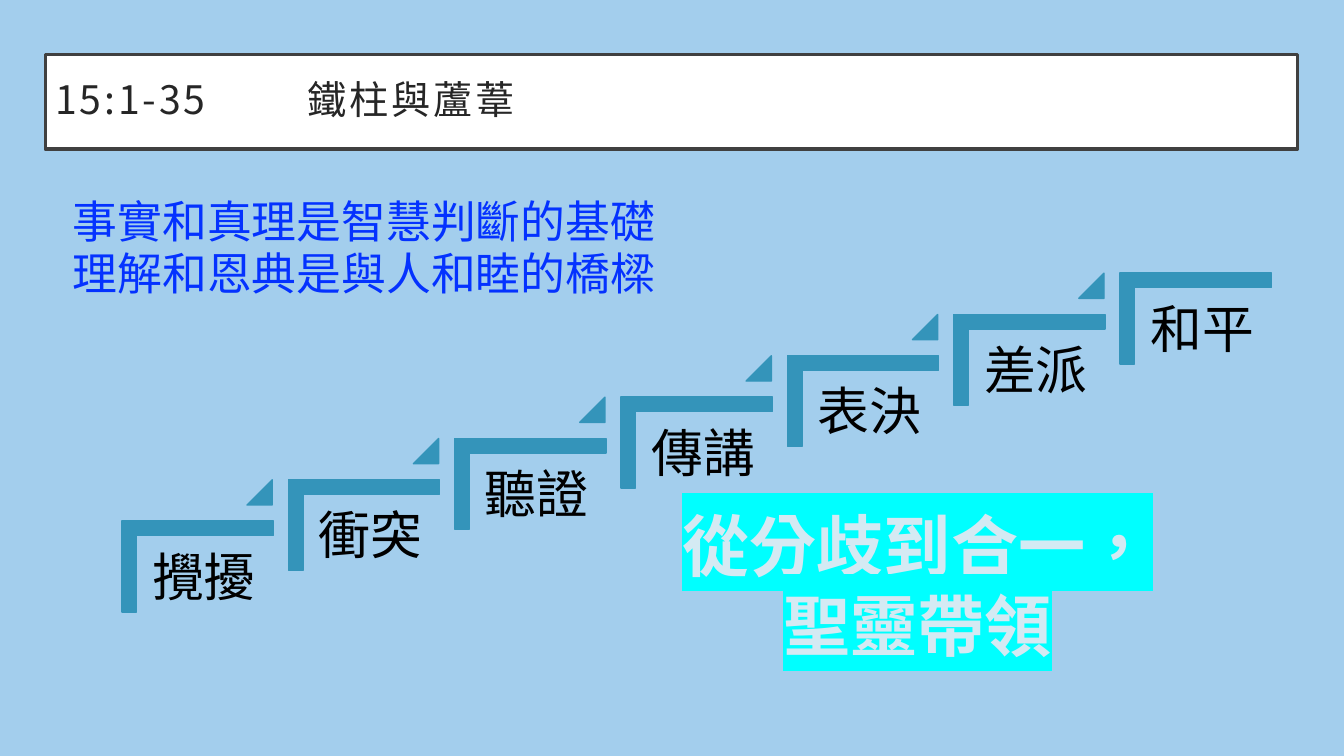
from dataclasses import dataclass

from lxml import etree
from pptx import Presentation
from pptx.dml.color import RGBColor
from pptx.enum.shapes import MSO_SHAPE
from pptx.enum.text import MSO_ANCHOR, MSO_AUTO_SIZE, PP_ALIGN
from pptx.oxml.ns import qn
from pptx.util import Inches, Pt

CORNER = MSO_SHAPE.CORNER
WEDGE = MSO_SHAPE.ISOSCELES_TRIANGLE
LEFT, CENTER = PP_ALIGN.LEFT, PP_ALIGN.CENTER
TOP, MIDDLE = MSO_ANCHOR.TOP, MSO_ANCHOR.MIDDLE
FIXED, GROW = MSO_AUTO_SIZE.NONE, MSO_AUTO_SIZE.SHAPE_TO_FIT_TEXT


@dataclass(frozen=True)
class Theme:
    sky: str = "A3CEED"
    teal: str = "3494BA"
    white: str = "FFFFFF"
    frame: str = "404040"
    ink: str = "262626"
    black: str = "000000"
    blue: str = "0432FF"
    pale: str = "D4EAF3"
    cyan: str = "00FFFF"
    font: str = "Noto Sans CJK SC"
    latin: str = "Calibri"
    title: int = 28
    body: int = 32
    step: int = 37
    call: int = 48


THEME = Theme()
STEPS = ["攪擾", "衝突", "聽證", "傳講", "表決", "差派", "和平"]
STEP_X, STEP_Y = 1.65, -0.41


def apply(item, form):
    for name, value in form.items():
        setattr(item, name, value)


def place(shape, box):
    names = ("left", "top", "width", "height")
    apply(shape, dict(zip(names, map(Inches, box))))


def paint(shape, fill, line, width):
    shape.fill.solid()
    shape.fill.fore_color.rgb = RGBColor.from_string(fill)
    shape.line.color.rgb = RGBColor.from_string(line)
    shape.line.width = Pt(width)


def write(shape, lines, size, color, pads, frame=None, para=None,
          font=THEME.font, bold=False):
    text = shape.text_frame
    names = ("margin_left", "margin_top", "margin_right", "margin_bottom")
    apply(text, dict(zip(names, map(Inches, pads))))
    apply(text, {"word_wrap": True, "auto_size": FIXED,
                 "vertical_anchor": TOP, **(frame or {})})
    runs = []
    for i, line in enumerate(lines):
        item = text.paragraphs[0] if i == 0 else text.add_paragraph()
        apply(item, {"alignment": LEFT, **(para or {})})
        run = item.add_run()
        run.text = line
        apply(run.font, {"name": font, "size": Pt(size), "bold": bold})
        run.font.color.rgb = RGBColor.from_string(color)
        props = run.font._element
        props.set("lang", "zh-TW")
        if font == THEME.font:
            etree.SubElement(props, qn("a:ea")).set("typeface", font)
        runs.append(run)
    return runs


def add_text(slide, box, *args, **form):
    return write(slide.shapes.add_textbox(*map(Inches, box)), *args, **form)


def add_mark(slide, kind, box, ratios, turn=0):
    mark = slide.shapes.add_shape(kind, *map(Inches, box))
    mark.shadow.inherit = False
    mark.rotation = turn
    for i, ratio in enumerate(ratios):
        mark.adjustments[i] = ratio
    paint(mark, THEME.teal, THEME.teal, 1)


def add_step(slide, i, label):
    x, y = i * STEP_X, i * STEP_Y
    add_mark(slide, CORNER, (1.51 + x, 4.87 + y, 0.9, 1.5),
             (0.16, 0.16), turn=90)
    add_text(slide, (1.36 + x, 5.32 + y, 1.35, 1.18), [label],
             THEME.step, THEME.black, [0.15] * 4,
             para={"line_spacing": 0.9})
    if i < len(STEPS) - 1:
        add_mark(slide, WEDGE, (2.45 + x, 4.76 + y, 0.25, 0.25), (1,))


def add_title(slide):
    title = slide.shapes.title
    place(title, (0.45, 0.54, 12.42, 0.94))
    paint(title, THEME.white, THEME.frame, 2.5)
    runs = write(title, ["15:1-35\t\t鐵柱與蘆葦"], THEME.title, THEME.ink,
                 [0.1] * 4, frame={"vertical_anchor": MIDDLE},
                 para={"line_spacing": 0.9})
    runs[0].font._element.set("spc", "200")


def add_body(slide):
    lines = ["事實和真理是智慧判斷的基礎", "理解和恩典是與人和睦的橋樑"]
    add_text(slide, (0.45, 1.91, 12.17, 5.05), lines, THEME.body,
             THEME.blue, (0.27, 0.1, 0.1, 0.1),
             para={"line_spacing": 0.83, "space_before": Pt(5.3)})


def add_call(slide):
    runs = add_text(slide, (6.61, 4.93, 4.98, 1.75),
                    ["從分歧到合一，", "聖靈帶領"], THEME.call, THEME.pale,
                    (0.13, 0.07, 0.13, 0.07),
                    frame={"word_wrap": False, "auto_size": GROW},
                    para={"alignment": CENTER}, font=THEME.latin, bold=True)
    for run in runs:
        glow = etree.Element(qn("a:highlight"))
        etree.SubElement(glow, qn("a:srgbClr")).set("val", THEME.cyan)
        run.font._element.find(qn("a:solidFill")).addnext(glow)


def main():
    deck = Presentation()
    apply(deck, {"slide_width": Inches(13.33), "slide_height": Inches(7.5)})
    slide = deck.slides.add_slide(deck.slide_layouts[5])
    slide.background.fill.solid()
    slide.background.fill.fore_color.rgb = RGBColor.from_string(THEME.sky)
    add_title(slide)
    add_body(slide)
    for i, label in enumerate(STEPS):
        add_step(slide, i, label)
    add_call(slide)
    deck.save("out.pptx")


if __name__ == "__main__":
    main()
